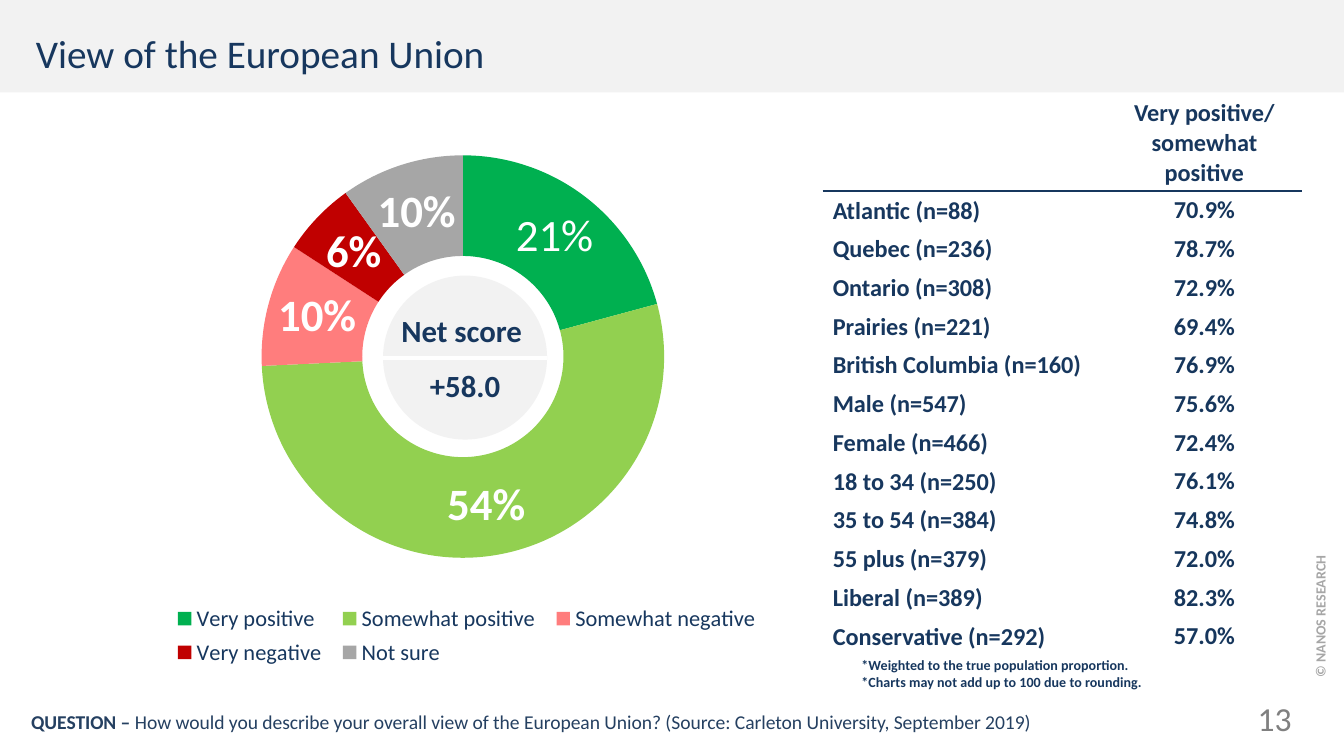
from lxml import etree
from pptx import Presentation
from pptx import util as u
from pptx.chart import data as cd
from pptx.dml.color import RGBColor
from pptx.enum import chart as ch, shapes as sh, text as tx
from pptx.oxml.ns import qn

NAVY = RGBColor(0x17, 0x37, 0x5E)
INK = RGBColor(0x16, 0x36, 0x5C)
DEEP = RGBColor(0x25, 0x40, 0x61)
PALE = RGBColor(0xF2, 0xF2, 0xF2)
WHITE = RGBColor(0xFF, 0xFF, 0xFF)
GREY = RGBColor(0x80, 0x80, 0x80)
SILVER = RGBColor(0xA6, 0xA6, 0xA6)
GREEN = RGBColor(0x00, 0xB0, 0x50)
LIME = RGBColor(0x92, 0xD0, 0x50)
PINK = RGBColor(0xFF, 0x7D, 0x7D)
RED = RGBColor(0xC0, 0x00, 0x00)
FACE = "Calibri"
LEFT, MID, RIGHT = tx.PP_ALIGN.LEFT, tx.PP_ALIGN.CENTER, tx.PP_ALIGN.RIGHT

VIEWS = [
    ("Very positive", 21, GREEN),
    ("Somewhat positive", 54, LIME),
    ("Somewhat negative", 10, PINK),
    ("Very negative", 6, RED),
    ("Not sure", 10, SILVER),
]
GROUPS = [
    ("Atlantic (n=88)", "70.9%"),
    ("Quebec (n=236)", "78.7%"),
    ("Ontario (n=308)", "72.9%"),
    ("Prairies (n=221)", "69.4%"),
    ("British Columbia (n=160)", "76.9%"),
    ("Male (n=547)", "75.6%"),
    ("Female (n=466)", "72.4%"),
    ("18 to 34 (n=250)", "76.1%"),
    ("35 to 54 (n=384)", "74.8%"),
    ("55 plus (n=379)", "72.0%"),
    ("Liberal (n=389)", "82.3%"),
    ("Conservative (n=292)", "57.0%"),
]


def style(font, size, color, bold=False):
    """Set face, size, colour and weight of a font."""
    font.name, font.size, font.bold = FACE, u.Pt(size), bold
    font.color.rgb = color


def write(par, words, size, color, bold=False, align=LEFT):
    """Add one run to a paragraph."""
    par.alignment = align
    run = par.add_run()
    run.text = words
    style(run.font, size, color, bold)


def inset(item, side, edge):
    """Set the margins of a text frame or a cell."""
    item.margin_left = item.margin_right = u.Cm(side)
    item.margin_top = item.margin_bottom = u.Cm(edge)


def frame(slide, box, side=0.25, edge=0.13, anchor=tx.MSO_ANCHOR.TOP):
    """Add a wrapping text box and return its frame."""
    body = slide.shapes.add_textbox(*map(u.Cm, box)).text_frame
    body.word_wrap = True
    body.vertical_anchor = anchor
    inset(body, side, edge)
    return body


def panel(slide, kind, box):
    """Add a pale shape without an outline."""
    shape = slide.shapes.add_shape(kind, *map(u.Cm, box))
    shape.shadow.inherit = False
    shape.fill.solid()
    shape.fill.fore_color.rgb = PALE
    shape.line.fill.background()


def header(slide, box):
    """Place the title on its band."""
    left, top, wide, high = box
    panel(slide, sh.MSO_SHAPE.RECTANGLE, box)
    spot = (left + 0.5, top + 0.13, wide - 1, high)
    body = frame(slide, spot, 0.18, 0.1, tx.MSO_ANCHOR.MIDDLE)
    write(body.paragraphs[0], "View of the European Union", 21, NAVY)


def layout(place, box, inner=False):
    """Put a manual layout into a chart element."""
    lay = etree.Element(qn("c:layout"))
    man = etree.SubElement(lay, qn("c:manualLayout"))
    parts = [("layoutTarget", "inner")] if inner else []
    parts += [("xMode", "edge"), ("yMode", "edge")]
    parts += zip("xywh", map(str, box))
    for tag, val in parts:
        etree.SubElement(man, qn("c:" + tag)).set("val", val)
    place(lay)


def donut(slide, box):
    """Place the doughnut chart with its legend."""
    data = cd.CategoryChartData()
    data.categories = [name for name, _, _ in VIEWS]
    data.add_series("Series 1", [val for _, val, _ in VIEWS])
    chart = slide.shapes.add_chart(
        ch.XL_CHART_TYPE.DOUGHNUT, *map(u.Cm, box), data).chart
    chart.has_title = False
    chart.font.name, chart.font.size = FACE, u.Pt(18)
    plot = chart.plots[0]
    plot.vary_by_categories = True
    series = plot.series[0]
    for spot, (_, _, color) in enumerate(VIEWS):
        fill = series.points[spot].format.fill
        fill.solid()
        fill.fore_color.rgb = color
    labels = series.data_labels
    labels.show_value = True
    labels.number_format, labels.number_format_is_linked = '0"%"', False
    style(labels.font, 24, WHITE, True)
    first = series.points[0].data_label.text_frame
    write(first.paragraphs[0], "21%", 24, WHITE, align=MID)

    chart.has_legend = True
    key = chart.legend
    key.position = ch.XL_LEGEND_POSITION.BOTTOM
    key.include_in_layout = False
    style(key.font, 12, NAVY)

    root = chart._chartSpace
    for old in list(root.iter(qn("c:layout"))):
        old.getparent().remove(old)
    area = root.find(".//" + qn("c:plotArea"))
    layout(lambda lay: area.insert(0, lay), (0.22, 0.1, 0.58, 0.7), True)
    layout(root.find(".//" + qn("c:legendPos")).addnext, (0.13, 0.87, 0.77, 0.13))
    for hole in root.iter(qn("c:holeSize")):
        hole.set("val", "55")


def score(slide, box):
    """Place the net score disc, its divider and its text."""
    left, top, wide, high = box
    panel(slide, sh.MSO_SHAPE.FLOWCHART_CONNECTOR, box)
    body = frame(slide, (left - 0.23, top + 0.2, wide + 0.46, high - 0.46))
    for spot, words in enumerate(("Net score ", "+58.0")):
        par = body.add_paragraph() if spot else body.paragraphs[0]
        par.line_spacing = 1.5
        write(par, words, 16.5, NAVY, True, MID)
    mid = top + high / 2
    line = slide.shapes.add_connector(
        sh.MSO_CONNECTOR.STRAIGHT, *map(u.Cm, (left, mid, left + wide, mid)))
    line.line.color.rgb, line.line.width = WHITE, u.Pt(2.25)
    etree.SubElement(line.element.spPr, qn("a:effectLst"))


def rule(cell):
    """Draw a navy border under a cell."""
    edge = etree.Element(qn("a:lnB"), w=str(u.Pt(1.5)))
    fill = etree.SubElement(edge, qn("a:solidFill"))
    etree.SubElement(fill, qn("a:srgbClr"), val=str(NAVY))
    cell._tc.get_or_add_tcPr().insert(0, edge)


def table(slide, box):
    """Place the table of positive shares by group."""
    rows = [("", "Very positive/ somewhat positive")] + GROUPS
    grid = slide.shapes.add_table(len(rows), 2, *map(u.Cm, box)).table
    grid.first_row = grid.horz_banding = False
    for col, wide in zip(grid.columns, (5.36, 3.68)):
        col.width = u.Cm(wide)
    for r, row in enumerate(rows):
        grid.rows[r].height = u.Cm(0.69 if r else 1.73)
        for c, words in enumerate(row):
            cell = grid.cell(r, c)
            cell.fill.background()
            cell.vertical_anchor = tx.MSO_ANCHOR.MIDDLE
            value = r and c
            inset(cell, *((0.03, 0.01) if value else (0.18, 0.09)))
            if words:
                write(cell.text_frame.paragraphs[0], words, 13,
                      INK if value else NAVY, True, MID if c else LEFT)
            if r == 0:
                rule(cell)


def notes(slide, box):
    """Place the two remarks under the table."""
    body = frame(slide, box)
    write(body.paragraphs[0], "*Weighted to the true population proportion.",
          7.5, NAVY, True)
    write(body.add_paragraph(), "*Charts may not add up to 100 due to rounding.",
          7.5, NAVY, True)


def footer(slide, box):
    """Place the question and the page number."""
    left, top, wide, high = box
    par = frame(slide, (left, top + 0.15, 19.5, 0.58), 0.13, 0.08).paragraphs[0]
    write(par, "QUESTION – ", 10.5, DEEP, True)
    write(par, "How would you describe your overall view of the European Union? "
          "(Source: Carleton University, September 2019)", 10.5, DEEP)
    spot = (left + wide - 1.14, top, 1.14, high)
    page = frame(slide, spot, 0.18, 0.1, tx.MSO_ANCHOR.MIDDLE)
    write(page.paragraphs[0], "13", 18, GREY, align=RIGHT)


def credit(slide, box):
    """Place the upright copyright line."""
    body = frame(slide, box)
    body._txBody.find(qn("a:bodyPr")).set("vert", "vert270")
    write(body.paragraphs[0], "© NANOS RESEARCH", 7.5, SILVER, True)


def main():
    """Build the slide and save it."""
    deck = Presentation()
    deck.slide_width, deck.slide_height = u.Cm(25.4), u.Cm(14.29)
    slide = deck.slides.add_slide(deck.slide_layouts[6])
    header(slide, (0, 0, 25.4, 1.75))
    credit(slide, (24.54, 10.07, 0.84, 2.87))
    donut(slide, (1.17, 1.85, 14.86, 10.87))
    score(slide, (7.24, 5.21, 3.1, 3.1))
    footer(slide, (0.46, 13.19, 24.13, 0.76))
    notes(slide, (16.03, 12.28, 5.87, 0.89))
    table(slide, (15.56, 1.78, 9.04, 10.01))
    deck.save("out.pptx")


if __name__ == "__main__":
    main()
